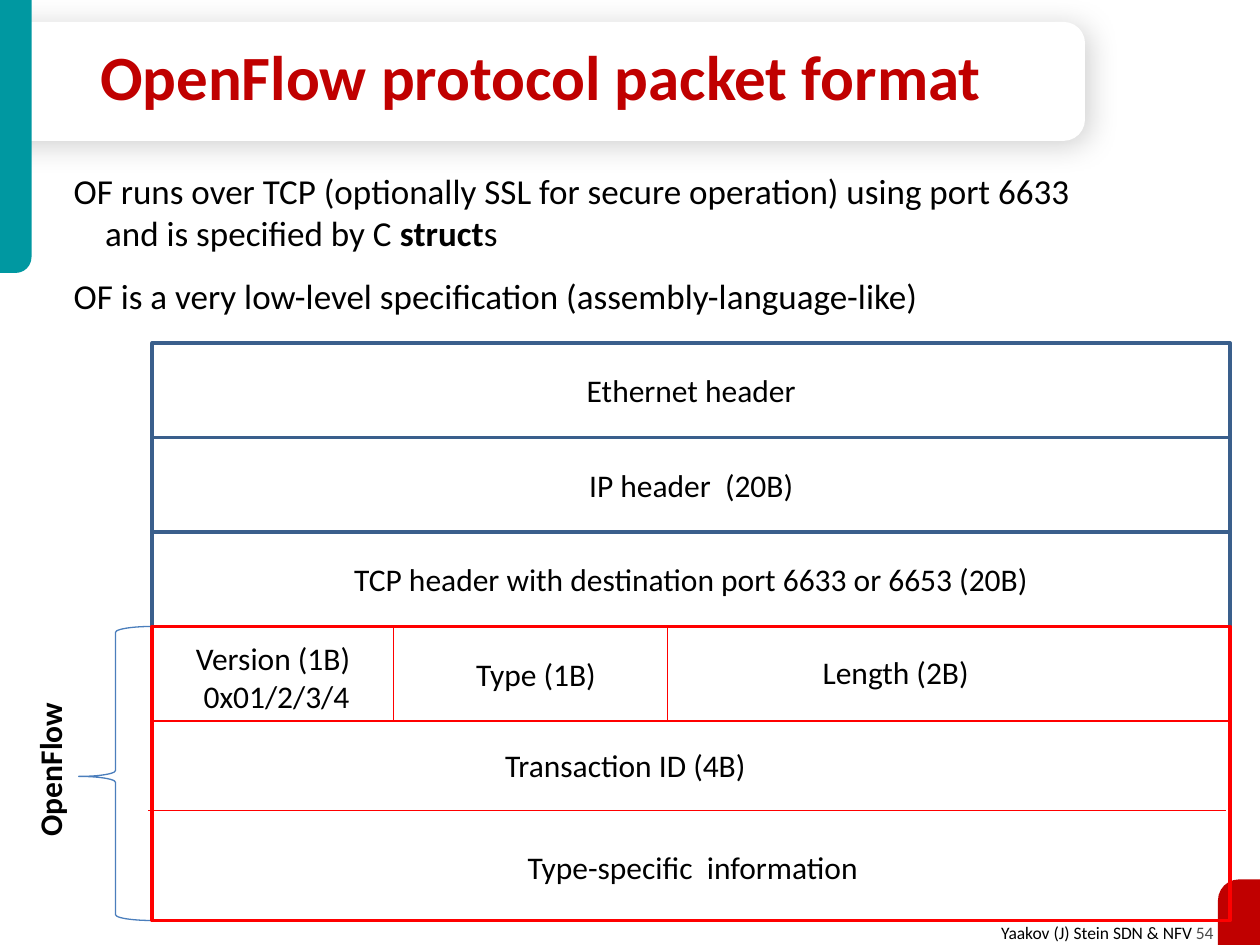
from lxml import etree
from pptx import Presentation
from pptx import util as u
from pptx.dml.color import RGBColor
from pptx.enum import shapes, text
from pptx.oxml.ns import qn

Kind = shapes.MSO_SHAPE
Align = text.PP_ALIGN
Anchor = text.MSO_ANCHOR
RED, BLUE, TEAL, DARK = "FF0000", "3A5F8C", "0098A1", "C00000"


def color(code):
    return RGBColor.from_string(code)


class Page:
    face = "Calibri"
    ink = "000000"
    size = 18

    def __init__(self, deck):
        self.slide = deck.slides.add_slide(deck.slide_layouts[5])
        self.items = self.slide.shapes

    def place(self, item, box):
        item.left, item.top, item.width, item.height = map(u.Pt, box)

    def style(self, para, size=None, ink=None, bold=False, align=Align.LEFT):
        font = para.font
        font.name, font.size, font.bold = self.face, u.Pt(size or self.size), bold
        font.color.rgb = color(ink or self.ink)
        para.alignment = align

    def title(self, words, box):
        item = self.items.title
        self.items._spTree.append(item._element)  # bring in front of the panel
        self.place(item, box)
        frame = item.text_frame
        frame.text = words
        frame.auto_size = text.MSO_AUTO_SIZE.NONE
        frame.vertical_anchor = Anchor.MIDDLE
        para = frame.paragraphs[0]
        para.line_spacing = 0.85
        self.style(para, 36, DARK, True)

    def label(self, words, box, wrap=False, turn=0, **look):
        item = self.items.add_textbox(*map(u.Pt, box))
        item.rotation = turn
        frame = item.text_frame
        frame.word_wrap = wrap
        frame.text = words
        for para in frame.paragraphs:
            self.style(para, **look)
        return frame

    def shape(self, kind, box, fill=None, line=None, width=2, adj=(), flip=None):
        item = self.items.add_shape(kind, *map(u.Pt, box))
        item.shadow.inherit = False
        for i, value in enumerate(adj):
            item.adjustments[i] = value
        if fill:
            item.fill.solid()
            item.fill.fore_color.rgb = color(fill)
        else:
            item.fill.background()
        if line:
            item.line.color.rgb = color(line)
            item.line.width = u.Pt(width)
        else:
            item.line.fill.background()
        if flip:
            item._element.spPr.find(qn("a:xfrm")).set(flip, "1")
        return item

    def row(self, words, box):
        frame = self.shape(Kind.RECTANGLE, box, line=BLUE).text_frame
        frame.vertical_anchor = Anchor.MIDDLE
        frame.text = words
        self.style(frame.paragraphs[0], align=Align.CENTER)

    def rule(self, x1, y1, x2, y2):
        line = self.items.add_connector(
            shapes.MSO_CONNECTOR.STRAIGHT, *map(u.Pt, (x1, y1, x2, y2)))
        line.line.color.rgb = color(RED)
        line.line.width = u.Pt(0.75)
        etree.SubElement(line._element.spPr, qn("a:effectLst"))

    def shade(self, item, blur, dist, angle, alpha):
        effects = item._element.spPr.find(qn("a:effectLst"))
        outer = etree.SubElement(
            effects, qn("a:outerShdw"), blurRad=str(u.Pt(blur)),
            dist=str(u.Pt(dist)), dir=str(angle * 60000), rotWithShape="0")
        tint = etree.SubElement(outer, qn("a:srgbClr"), val="000000")
        etree.SubElement(tint, qn("a:alpha"), val=str(alpha * 1000))


def main():
    deck = Presentation()
    deck.slide_width, deck.slide_height = u.Pt(720), u.Pt(540)
    page = Page(deck)

    # Frame: footer, title panel, corner tabs
    foot = page.label("", (560, 523.5, 140.5, 19.5), size=10, align=Align.RIGHT)
    para = foot.paragraphs[0]
    para.add_run().text = "Yaakov (J) Stein SDN & NFV "
    number = para.add_run()
    number.text = "54"
    number.font.color.rgb = color("4D4D4D")

    panel = page.shape(Kind.ROUND_2_SAME_RECTANGLE, (276, -263.5, 68, 620),
                       fill="FFFFFF", adj=(0.18, 0))
    panel.rotation = 90
    page.shade(panel, blur=17, dist=3, angle=45, alpha=19)
    page.shape(Kind.ROUND_1_RECTANGLE, (0, 0, 18, 156),
               fill=TEAL, adj=(0.5,), flip="flipV")
    page.shape(Kind.ROUND_1_RECTANGLE, (696, 502.5, 24, 37.5),
               fill=DARK, adj=(0.5,), flip="flipH")
    page.title("OpenFlow protocol packet format", (50, 21, 533, 51))

    # Packet: outer headers, then the OpenFlow message
    left, wide, top, high = 87, 616, 196, 54
    heads = ("Ethernet header", "IP header  (20B)",
             "TCP header with destination port 6633 or 6653 (20B)")
    for i, words in enumerate(heads):
        page.row(words, (left, top + i * high, wide, high))
    start = top + len(heads) * high
    tall = 168
    page.shape(Kind.LEFT_BRACE, (45, start, 42, tall), line="4B7EBC",
               width=0.75, adj=(0.08, 0.51))
    page.label("OpenFlow", (-17, 425, 91, 29), turn=270, bold=True)
    page.shape(Kind.RECTANGLE, (left, start, wide, tall), line=RED)

    # Field dividers
    for x in (225, 381.5):
        page.rule(x, start, x, start + high)
    page.rule(left, start + high, left + wide, start + high)
    page.rule(84.5, 463, 700.5, 463)

    # Field names
    page.label("Version (1B)\n 0x01/2/3/4", (90, 361.5, 132, 51),
               wrap=True, align=Align.CENTER)
    fields = (("Type (1B)", 265, 371, 83.5), ("Length (2B)", 463, 369.5, 99.5),
              ("Transaction ID (4B)", 281.5, 422.5, 153.5),
              ("Type-specific  information", 294.5, 481, 205))
    for words, x, y, width in fields:
        page.label(words, (x, y, width, 29))

    # Opening notes
    notes = page.label(
        "OF runs over TCP (optionally SSL for secure operation) using port 6633\n"
        "and is specified by C \n"
        "OF is a very low-level specification (assembly-language-like)",
        (35, 93.5, 618, 98), wrap=True, size=20)
    first, second, third = notes.paragraphs
    second._p.get_or_add_pPr().set("marL", str(u.Pt(18)))
    third.space_before = u.Pt(12)
    for words, bold in (("struct", True), ("s", False)):
        run = second.add_run()
        run.text, run.font.bold = words, bold

    deck.save("out.pptx")


if __name__ == "__main__":
    main()
